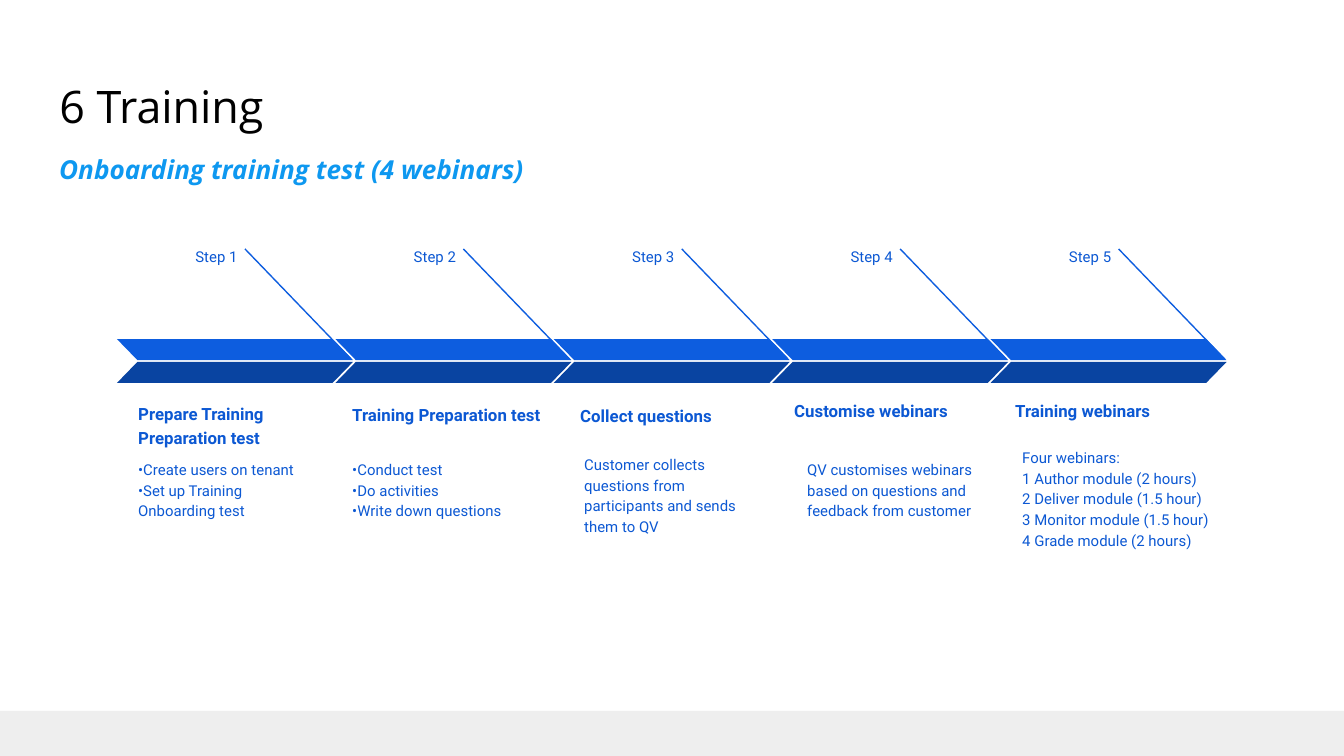
"""Build the training slide: a five-step chevron timeline with notes."""
from pptx import Presentation
from pptx import util as u
from pptx.dml.color import RGBColor
from pptx.enum import shapes, text
from pptx.oxml.ns import qn
from lxml import etree

TITLE = "6 Training"
SUBTITLE = "Onboarding training test (4 webinars)"
STEPS = [
    {"heading": "Prepare Training Preparation test", "heading_at": (125, 395, 204),
     "notes": ["•Create users on tenant", "•Set up Training\vOnboarding test"],
     "notes_at": (125, 445, 211)},
    {"heading": "Training Preparation test", "heading_at": (339, 372, 226),
     "notes": ["•Conduct test", "•Do activities", "•Write down questions"],
     "notes_at": (339, 445, 195)},
    {"heading": "Collect questions", "heading_at": (567, 373, 195),
     "notes": ["Customer collects questions from participants and sends them to QV"],
     "notes_at": (571, 440, 203)},
    {"heading": "Customise webinars", "heading_at": (781, 368, 195),
     "notes": ["QV customises webinars based on questions and feedback from customer"],
     "notes_at": (794, 445, 195)},
    {"heading": "Training webinars", "heading_at": (1002, 368, 195),
     "notes": ["Four webinars:", "1 Author module (2 hours)", "2 Deliver module (1.5 hour)",
               "3 Monitor module (1.5 hour)", "4 Grade module (2 hours)"],
     "notes_at": (1009, 433, 215)},
]
SLIDE_WIDTH, SLIDE_HEIGHT = 1344, 756
FIRST_LEFT, STEP_PITCH = 117, 218.4
BAR_WIDTH, BAR_HEIGHT, BAR_SLANT = 236, 21, 0.97
BRIGHT, DARK, INK, SKY = "0D5DDF", "0944A1", "0C58D3", "0E98F0"


def px(length):
    return u.Emu(round(length * 914400 / 134.4))


def color(value):
    return RGBColor.from_string(value)


def fill_text(shape, lines, size, font, ink, bold=False, italic=False,
              anchor=text.MSO_ANCHOR.TOP, align=text.PP_ALIGN.LEFT, spacing=1.15):
    frame = shape.text_frame
    frame.word_wrap = True
    frame.auto_size = text.MSO_AUTO_SIZE.NONE
    frame.vertical_anchor = anchor
    frame.margin_left = frame.margin_right = px(13.44)
    frame.margin_top = frame.margin_bottom = px(13.44)
    frame.text = "\n".join(lines)
    for paragraph in frame.paragraphs:
        paragraph.alignment = align
        paragraph.line_spacing = spacing
        paragraph.font.size = u.Pt(size)
        paragraph.font.name = font
        paragraph.font.bold = bold
        paragraph.font.italic = italic
        paragraph.font.color.rgb = color(ink)


def add_text(slide, box, lines, size, font, ink, **options):
    shape = slide.shapes.add_textbox(*map(px, box))
    fill_text(shape, lines, size, font, ink, **options)


def add_block(slide, kind, box, fill):
    shape = slide.shapes.add_shape(kind, *map(px, box))
    shape.shadow.inherit = False
    shape.fill.solid()
    shape.fill.fore_color.rgb = color(fill)
    shape.line.fill.background()
    return shape


def add_bar(slide, left, top, fill, flipped):
    bar = add_block(slide, shapes.MSO_SHAPE.PARALLELOGRAM,
                    (left, top, BAR_WIDTH, BAR_HEIGHT), fill)
    bar.adjustments[0] = BAR_SLANT
    if flipped:
        bar._element.spPr.get_or_add_xfrm().set("flipH", "1")


def add_leader(slide, left):
    line = slide.shapes.add_connector(shapes.MSO_CONNECTOR.STRAIGHT,
                                      px(left + 128), px(249), px(left + 234), px(359))
    line.line.color.rgb = color(BRIGHT)
    line.line.width = u.Pt(0.75)
    etree.SubElement(line._element.spPr, qn("a:effectLst"))


def add_step(slide, index, step):
    left = FIRST_LEFT + index * STEP_PITCH
    add_leader(slide, left)
    add_bar(slide, left, 339, BRIGHT, True)
    add_bar(slide, left, 362, DARK, False)
    add_text(slide, (*step["heading_at"], 66), [step["heading"]], 9, "Roboto", INK,
             bold=True, anchor=text.MSO_ANCHOR.BOTTOM)
    add_text(slide, (*step["notes_at"], 109), step["notes"], 8, "Roboto", INK)
    add_text(slide, (left + 43, 231, 91, 35), [f"Step {index + 1}"], 8, "Roboto", INK,
             align=text.PP_ALIGN.RIGHT)


def main():
    presentation = Presentation()
    presentation.slide_width, presentation.slide_height = px(SLIDE_WIDTH), px(SLIDE_HEIGHT)
    slide = presentation.slides.add_slide(presentation.slide_layouts[5])
    add_block(slide, shapes.MSO_SHAPE.RECTANGLE, (0, 711, SLIDE_WIDTH, 45), "EEEEEE")
    title = slide.shapes.title
    title.left, title.top, title.width, title.height = map(px, (46, 65, 1253, 84))
    fill_text(title, [TITLE], 24, "Open Sans", "000000", spacing=1.0)
    add_text(slide, (46, 135, 1253, 84), [SUBTITLE], 14, "Open Sans", SKY,
             bold=True, italic=True)
    for index, step in enumerate(STEPS):
        add_step(slide, index, step)
    presentation.save("out.pptx")


if __name__ == "__main__":
    main()
